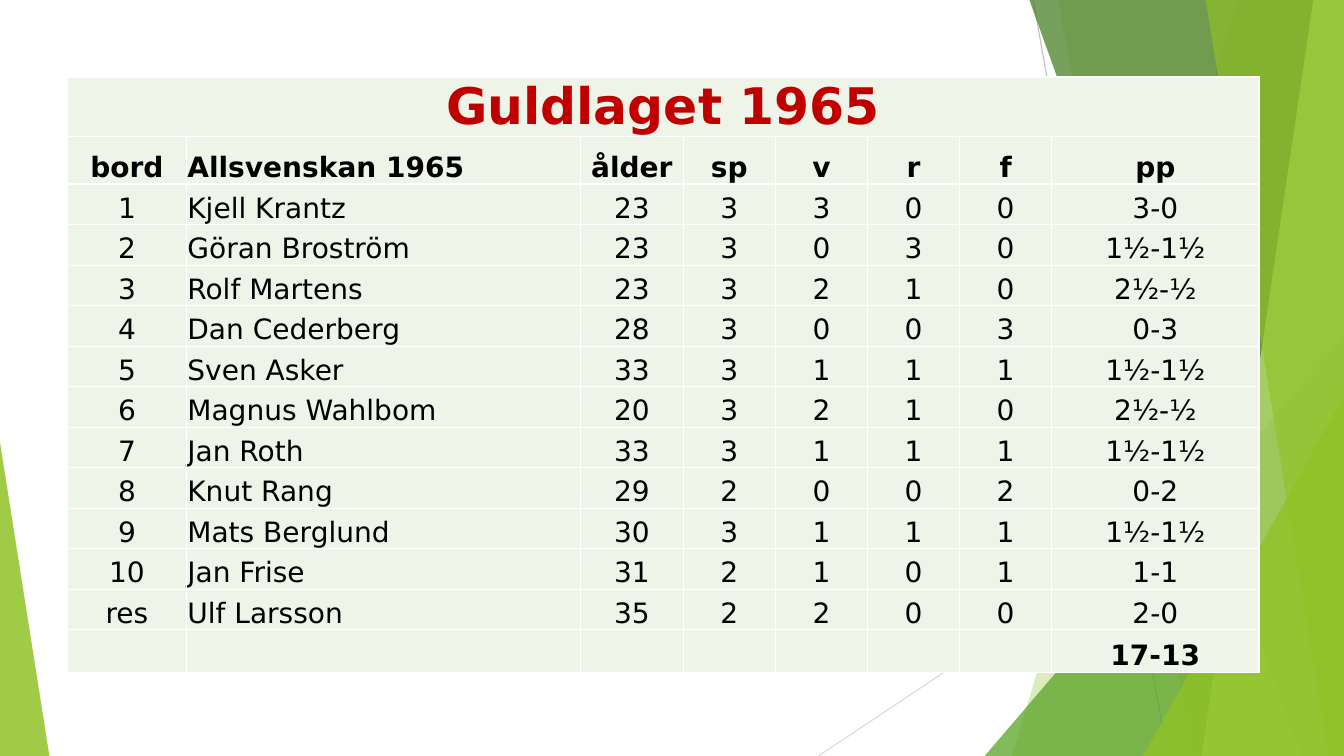
"""Builds a one-slide deck with the Guldlaget 1965 table."""
from lxml import etree
from pptx import Presentation
from pptx import util as u
from pptx.dml.color import RGBColor
from pptx.enum import shapes, text
from pptx.oxml import ns

Pt = u.Pt
WIDTH, HEIGHT, TOP = 960, 540, -0.6
FONT = "DejaVu Sans"
BLACK = RGBColor(0x00, 0x00, 0x00)
WHITE = RGBColor(0xFF, 0xFF, 0xFF)
RED = RGBColor(0xC0, 0x00, 0x00)
PALE = RGBColor(0xEE, 0xF4, 0xE8)
LIME = RGBColor(0x90, 0xC2, 0x26)
GREEN = RGBColor(0x54, 0xA0, 0x21)
FOREST = RGBColor(0x3F, 0x78, 0x19)
LIGHT_LIME = RGBColor(0xC0, 0xE4, 0x74)
GREY = RGBColor(0xBF, 0xBF, 0xBF)
LIGHT_GREY = RGBColor(0xD9, 0xD9, 0xD9)

TITLE = "Guldlaget 1965"
HEADINGS = ("bord", "Allsvenskan 1965", "ålder", "sp", "v", "r", "f", "pp")
ENTRIES = [
    ("1", "Kjell Krantz", "23", "3", "3", "0", "0", "3-0"),
    ("2", "Göran Broström", "23", "3", "0", "3", "0", "1½-1½"),
    ("3", "Rolf Martens", "23", "3", "2", "1", "0", "2½-½"),
    ("4", "Dan Cederberg", "28", "3", "0", "0", "3", "0-3"),
    ("5", "Sven Asker", "33", "3", "1", "1", "1", "1½-1½"),
    ("6", "Magnus Wahlbom", "20", "3", "2", "1", "0", "2½-½"),
    ("7", "Jan Roth", "33", "3", "1", "1", "1", "1½-1½"),
    ("8", "Knut Rang", "29", "2", "0", "0", "2", "0-2"),
    ("9", "Mats Berglund", "30", "3", "1", "1", "1", "1½-1½"),
    ("10", "Jan Frise", "31", "2", "1", "0", "1", "1-1"),
    ("res", "Ulf Larsson", "35", "2", "2", "0", "0", "2-0"),
]
TOTAL = "17-13"

TABLE_LEFT, TABLE_TOP = 48.2, 55
COLUMN_WIDTHS = [85, 281.5, 73.4] + [65.8] * 4 + [148.1]
ROW_HEIGHTS = [41.8, 33.9] + [28.95] * len(ENTRIES) + [30.4]

LINES = [
    ((738, 0), (834, HEIGHT), GREY),
    ((WIDTH, 290), (584.6, HEIGHT), LIGHT_GREY),
]
FACETS = [
    ("band", (884.2, 722.9), LIME, 30),
    ("band", (756, 852), LIME, 20),
    ("triangle", (703.4, 239.8, 256.6, 1), GREEN, 72),
    ("band", (735.1, 929.5), FOREST, 70),
    ("band", (938.2, 858.2), LIGHT_LIME, 70),
    ("band", (861.1, 949), LIME, 65),
    ("triangle", (816.5, 283, 143.5, 1), LIME, 80),
    ("triangle", (0, 316, 35.3, 0), LIME, 85),
]


def add_line(slide, start, end, color):
    line = slide.shapes.add_connector(
        shapes.MSO_CONNECTOR.STRAIGHT, *(Pt(value) for value in start + end))
    line.line.color.rgb = color
    line.line.width = Pt(0.75)
    etree.SubElement(line.element.spPr, ns.qn("a:effectLst"))


def add_band(slide, top_x, bottom_x):
    corners = [(WIDTH, TOP), (WIDTH, HEIGHT), (bottom_x, HEIGHT)]
    builder = slide.shapes.build_freeform(Pt(top_x), Pt(TOP))
    builder.add_line_segments([(Pt(x), Pt(y)) for x, y in corners], close=True)
    return builder.convert_to_shape()


def add_triangle(slide, left, top, width, apex):
    triangle = slide.shapes.add_shape(
        shapes.MSO_SHAPE.ISOSCELES_TRIANGLE,
        Pt(left), Pt(top), Pt(width), Pt(HEIGHT - top))
    triangle.adjustments[0] = apex
    return triangle


def paint(shape, color, opacity):
    shape.shadow.inherit = False
    shape.line.fill.background()
    shape.fill.solid()
    shape.fill.fore_color.rgb = color
    color_node = shape.element.spPr.find(ns.qn("a:solidFill"))[0]
    etree.SubElement(color_node, ns.qn("a:alpha"), val=str(opacity * 1000))


def style_cell(cell):
    properties = cell._tc.get_or_add_tcPr()
    for side in ("a:lnL", "a:lnR", "a:lnT", "a:lnB"):
        border = etree.SubElement(properties, ns.qn(side), w=str(Pt(1)))
        fill = etree.SubElement(border, ns.qn("a:solidFill"))
        etree.SubElement(fill, ns.qn("a:srgbClr"), val=str(WHITE))
    cell.fill.solid()
    cell.fill.fore_color.rgb = PALE
    cell.margin_left = cell.margin_right = cell.margin_top = Pt(0.7)
    cell.margin_bottom = Pt(0)
    cell.vertical_anchor = text.MSO_ANCHOR.BOTTOM


def write(cell, words, size=20, color=BLACK, bold=False,
          align=text.PP_ALIGN.CENTER):
    para = cell.text_frame.paragraphs[0]
    para.alignment = align
    span = para.add_run()
    span.text = words
    span.font.name = FONT
    span.font.size = Pt(size)
    span.font.bold = bold
    span.font.color.rgb = color


def add_results(slide):
    frame = slide.shapes.add_table(
        len(ROW_HEIGHTS), len(COLUMN_WIDTHS), Pt(TABLE_LEFT), Pt(TABLE_TOP),
        Pt(sum(COLUMN_WIDTHS)), Pt(sum(ROW_HEIGHTS)))
    table = frame.table
    table.first_row = table.horz_banding = False
    for column, width in zip(table.columns, COLUMN_WIDTHS):
        column.width = Pt(width)
    for row, height in zip(table.rows, ROW_HEIGHTS):
        row.height = Pt(height)
    for cell in table.iter_cells():
        style_cell(cell)

    last_row, last_column = len(ROW_HEIGHTS) - 1, len(COLUMN_WIDTHS) - 1
    table.cell(0, 0).merge(table.cell(0, last_column))
    write(table.cell(0, 0), TITLE, size=36, color=RED, bold=True)
    for row, entries in enumerate([HEADINGS] + ENTRIES, start=1):
        for column, entry in enumerate(entries):
            align = text.PP_ALIGN.LEFT if column == 1 else text.PP_ALIGN.CENTER
            write(table.cell(row, column), entry, bold=row == 1, align=align)
    write(table.cell(last_row, last_column), TOTAL, bold=True)


def main():
    deck = Presentation()
    deck.slide_width, deck.slide_height = Pt(WIDTH), Pt(HEIGHT)
    page = deck.slides.add_slide(deck.slide_layouts[6])
    for start, end, color in LINES:
        add_line(page, start, end, color)
    makers = {"band": add_band, "triangle": add_triangle}
    for kind, place, color, opacity in FACETS:
        paint(makers[kind](page, *place), color, opacity)
    add_results(page)
    deck.save("out.pptx")


if __name__ == "__main__":
    main()
